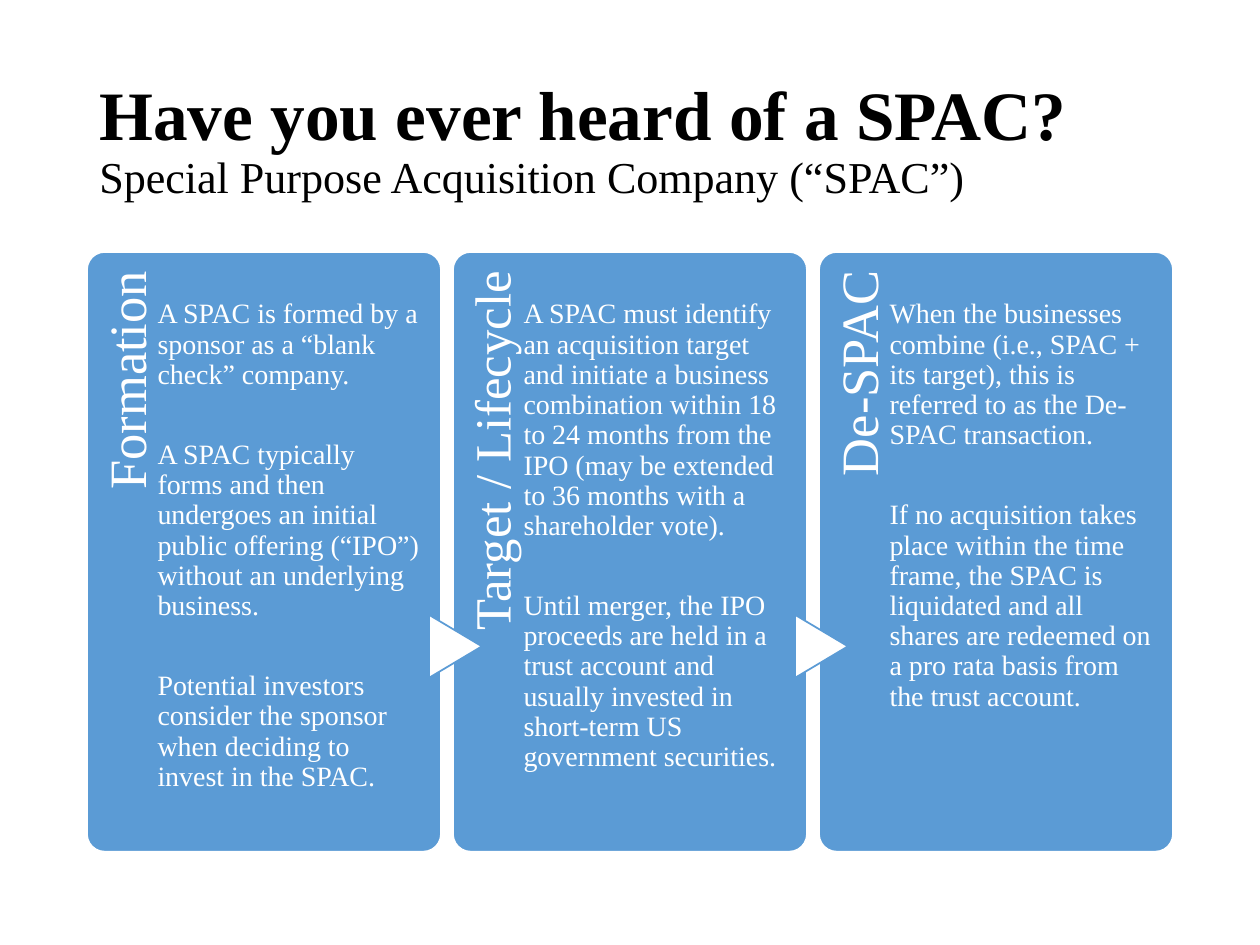
import pptx
import pptx.util
from dataclasses import dataclass
from pptx.dml.color import RGBColor
from pptx.enum.shapes import MSO_SHAPE
from pptx.enum.text import MSO_ANCHOR, PP_ALIGN
from pptx.util import Inches, Pt


@dataclass(frozen=True)
class Theme:
    font: str = "Times New Roman"
    black: RGBColor = RGBColor(0x00, 0x00, 0x00)
    white: RGBColor = RGBColor(0xFF, 0xFF, 0xFF)
    blue: RGBColor = RGBColor(0x5B, 0x9B, 0xD5)
    title: float = 39.6
    subtitle: float = 25.2
    label: float = 30
    long_label: float = 29
    body: float = 16


theme = Theme()

deck = pptx.Presentation()
deck.slide_width, deck.slide_height = Inches(10), Inches(7.5)
slide = deck.slides.add_slide(deck.slide_layouts[6])


def write(left, top, width, height, paragraphs, color=theme.white, align=PP_ALIGN.LEFT,
          anchor=MSO_ANCHOR.TOP, insets=(0.1, 0.05, 0.1, 0.05), spacing=0.9, after=0):
    """Add a text box; each paragraph is a list of lines (text, size, bold)."""
    box = slide.shapes.add_textbox(Inches(left), Inches(top), Inches(width), Inches(height))
    frame = box.text_frame
    frame.word_wrap = True
    frame.vertical_anchor = anchor
    (frame.margin_left, frame.margin_top,
     frame.margin_right, frame.margin_bottom) = [Inches(inset) for inset in insets]
    for number, lines in enumerate(paragraphs):
        para = frame.add_paragraph() if number else frame.paragraphs[0]
        para.alignment = align
        para.line_spacing = spacing
        para.space_after = Pt(after)
        for position, (text, size, bold) in enumerate(lines):
            if position:
                para.add_line_break()
            span = para.add_run()
            span.text = text
            span.font.name = theme.font
            span.font.size = Pt(size)
            span.font.bold = bold
            span.font.color.rgb = color
    return box


def add_shape(kind, left, top, width, height, fill, line):
    shape = slide.shapes.add_shape(kind, Inches(left), Inches(top), Inches(width), Inches(height))
    shape.shadow.inherit = False
    shape.fill.solid()
    shape.fill.fore_color.rgb = fill
    shape.line.color.rgb = line
    shape.line.width = Pt(1)
    return shape


margin, content_width = 0.69, 8.62
write(margin, 0.4, content_width, 1.45,
      [[("Have you ever heard of a SPAC?", theme.title, True),
        ("Special Purpose Acquisition Company (“SPAC”)", theme.subtitle, False)]],
      color=theme.black, anchor=MSO_ANCHOR.MIDDLE)

stages = [
    ("Formation", theme.label, [
        "A SPAC is formed by a sponsor as a “blank check” company.",
        "A SPAC typically forms and then undergoes an initial public offering (“IPO”) "
        "without an underlying business.",
        "Potential investors consider the sponsor when deciding to invest in the SPAC.",
    ]),
    ("Target / Lifecycle", theme.long_label, [
        "A SPAC must identify an acquisition target and initiate a business combination "
        "within 18 to 24 months from the IPO (may be extended to 36 months with a "
        "shareholder vote).",
        "Until merger, the IPO proceeds are held in a trust account and usually invested "
        "in short-term US government securities.",
    ]),
    ("De-SPAC", theme.label, [
        "When the businesses combine (i.e., SPAC + its target), this is referred to as "
        "the De-SPAC transaction.",
        "If no acquisition takes place within the time frame, the SPAC is liquidated and "
        "all shares are redeemed on a pro rata basis from the trust account.",
    ]),
]

panel_top, panel_width, panel_height = 2, 2.81, 4.76
pitch = (content_width - panel_width) / (len(stages) - 1)
label_length, label_height = 3.9, 0.56
arrow_width, arrow_height = 0.5, 0.42

for index, (name, label_size, texts) in enumerate(stages):
    left = margin + index * pitch
    panel = add_shape(MSO_SHAPE.ROUNDED_RECTANGLE, left, panel_top, panel_width, panel_height,
                      theme.blue, theme.white)
    panel.adjustments[0] = 0.05

    label = write(left + (label_height - label_length) / 2,
                  panel_top + (label_length - label_height) / 2,
                  label_length, label_height, [[(name, label_size, False)]],
                  align=PP_ALIGN.RIGHT, insets=(0, 0.11, 0.15, 0))
    label.rotation = 270

    if index:
        arrow = add_shape(MSO_SHAPE.FLOWCHART_EXTRACT, left + 0.02 - arrow_width / 2, 4.92,
                          arrow_width, arrow_height, theme.white, theme.blue)
        arrow.rotation = 90

    write(left + label_height, panel_top, 2.09, panel_height,
          [[(text, theme.body, False)] for text in texts],
          insets=(0, 0.38, 0, 0), after=28.5)

deck.save("out.pptx")
